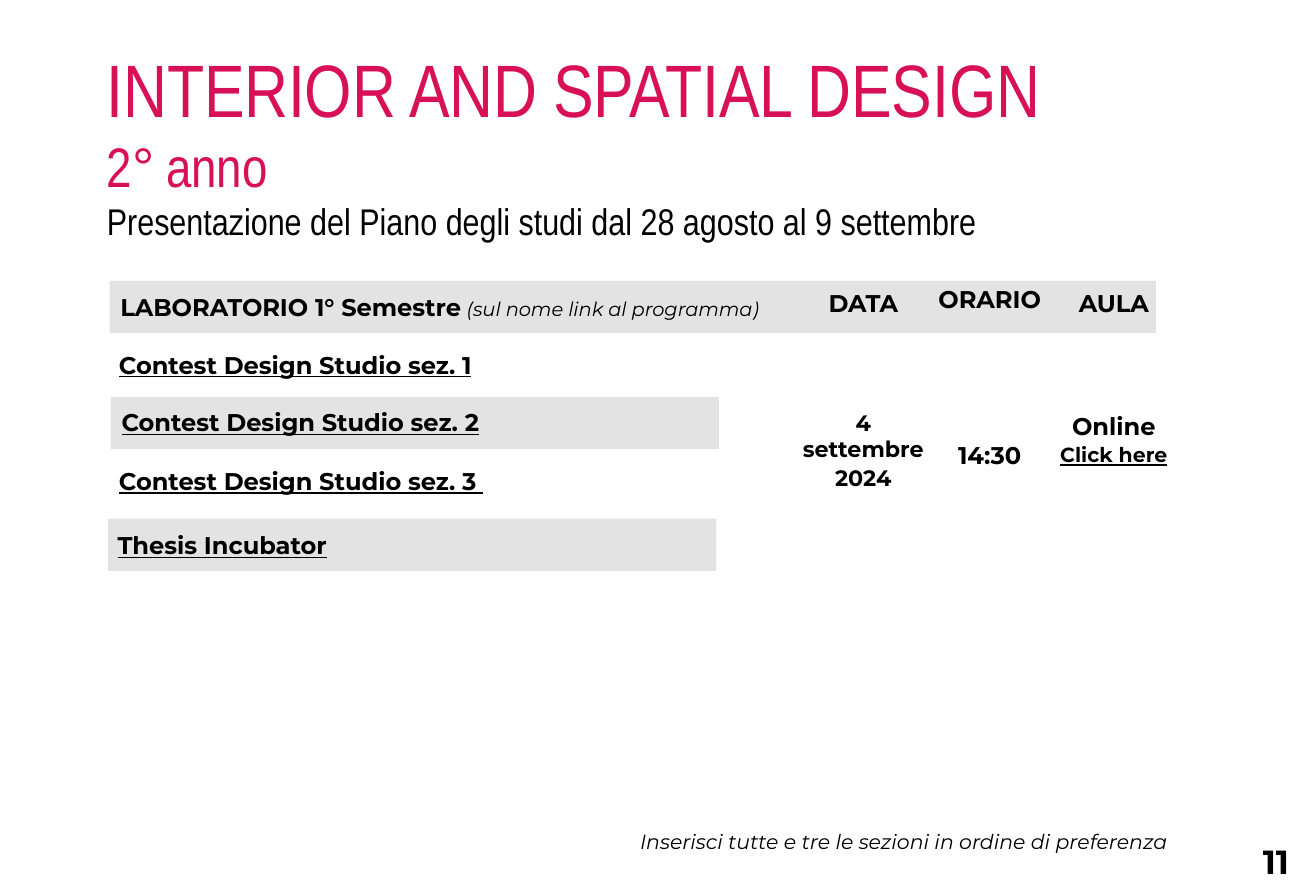
from pptx import Presentation
from pptx.dml.color import RGBColor
from pptx.enum.shapes import MSO_SHAPE as Shape
from pptx.enum.text import PP_ALIGN as Align
from pptx.util import Inches, Pt

COLORS = {"title": "D81056", "text": "000000", "band": "E3E3E3"}


class StudyPlanPage:
    heading_font = "Arial Narrow"
    body_font = "Montserrat"

    def __init__(self, deck):
        self.page = deck.slides.add_slide(deck.slide_layouts[6])

    def style(self, font, size, color="text", name=body_font,
              bold=False, italic=False, underline=False):
        font.name, font.size = name, Pt(size)
        font.bold, font.italic, font.underline = bold, italic, underline
        font.color.rgb = RGBColor.from_string(COLORS[color])

    def band(self, left, top, width):
        box = self.page.shapes.add_shape(
            Shape.RECTANGLE, Inches(left), Inches(top), Inches(width), Inches(0.39))
        box.shadow.inherit = False
        box.fill.solid()
        box.fill.fore_color.rgb = RGBColor.from_string(COLORS["band"])
        box.line.fill.background()

    def frame(self, left, top, width, height, inset=0.02):
        box = self.page.shapes.add_textbox(
            Inches(left), Inches(top), Inches(width), Inches(height))
        frame = box.text_frame
        frame.word_wrap = True
        frame.margin_left = frame.margin_right = frame.margin_bottom = 0
        frame.margin_top = Inches(inset)
        return frame

    def line(self, para, text, size, before=1, align=Align.LEFT, **look):
        para.text = text
        para.alignment = align
        para.space_before = Pt(before)
        self.style(para.font, size, **look)

    def label(self, area, text, size, inset=0.02, **look):
        self.line(self.frame(*area, inset).paragraphs[0], text, size, **look)

    def spans(self, area, parts, breaks=False):
        para = self.frame(*area).paragraphs[0]
        para.space_before = Pt(1)
        for index, (text, size, spacing, look) in enumerate(parts):
            if breaks and index:
                para.add_line_break()
            span = para.add_run()
            span.text = text
            self.style(span.font, size, **look)
            if spacing:
                span._r.get_or_add_rPr().set("spc", str(spacing))

    def column(self, area, lines):
        frame = self.frame(*area)
        for index, (text, size, before, underline) in enumerate(lines):
            para = frame.add_paragraph() if index else frame.paragraphs[0]
            self.line(para, text, size, before, Align.CENTER,
                      bold=True, underline=underline)


def main():
    deck = Presentation()
    deck.slide_width, deck.slide_height = Pt(709), Pt(482)
    plan = StudyPlanPage(deck)

    # Title
    heading = {"name": plan.heading_font}
    accent = {"name": plan.heading_font, "color": "title"}
    plan.spans((0.8, 0.3, 8.1, 1.53), [
        ("INTERIOR AND SPATIAL DESIGN", 40, -10, accent),
        ("2° anno", 30, -10, accent),
        ("Presentazione del Piano degli studi dal 28 agosto al 9 settembre",
         20, 0, heading),
    ], breaks=True)

    # Grey bands
    for left, top, width in [(0.82, 2.1, 7.83), (0.83, 2.97, 4.55), (0.81, 3.88, 4.55)]:
        plan.band(left, top, width)

    # Workshops
    plan.spans((0.9, 2.17, 4.92, 0.23), [
        ("LABORATORIO 1° Semestre", 13, 0, {"bold": True}),
        (" ", 12, 0, {"italic": True}),
        ("(sul nome link al programma)", 10.5, 0, {"italic": True}),
    ])
    for left, top, name in [
        (0.89, 2.6, "Contest Design Studio sez. 1"),
        (0.91, 3.03, "Contest Design Studio sez. 2"),
        (0.89, 3.47, "Contest Design Studio sez. 3 "),
        (0.88, 3.95, "Thesis Incubator"),
    ]:
        plan.label((left, top, 3.5, 0.23), name, 13, bold=True, underline=True)

    # Date, time and room: text, size, space before, underline
    plan.column((5.97, 2.14, 0.98, 2.25), [
        ("DATA", 13, 1, False),
        ("4 settembre", 12, 49, False),
        ("2024", 12, 1, False),
    ])
    plan.column((6.98, 2.11, 0.85, 2.1), [
        ("ORARIO", 13, 1, False),
        ("14:30", 13, 68, False),
    ])
    plan.column((7.87, 2.14, 0.93, 1.63), [
        ("AULA", 13, 1, False),
        ("Online", 13, 50.5, False),
        ("Click here", 11, 1, True),
    ])

    # Footer
    plan.label((3.32, 6.18, 5.42, 0.2),
               "Inserisci tutte e tre le sezioni in ordine di preferenza",
               11, align=Align.RIGHT, italic=True)
    plan.label((9.45, 6.26, 0.26, 0.34), "11", 18, inset=0.03, before=2.4, bold=True)

    deck.save("out.pptx")


if __name__ == "__main__":
    main()
